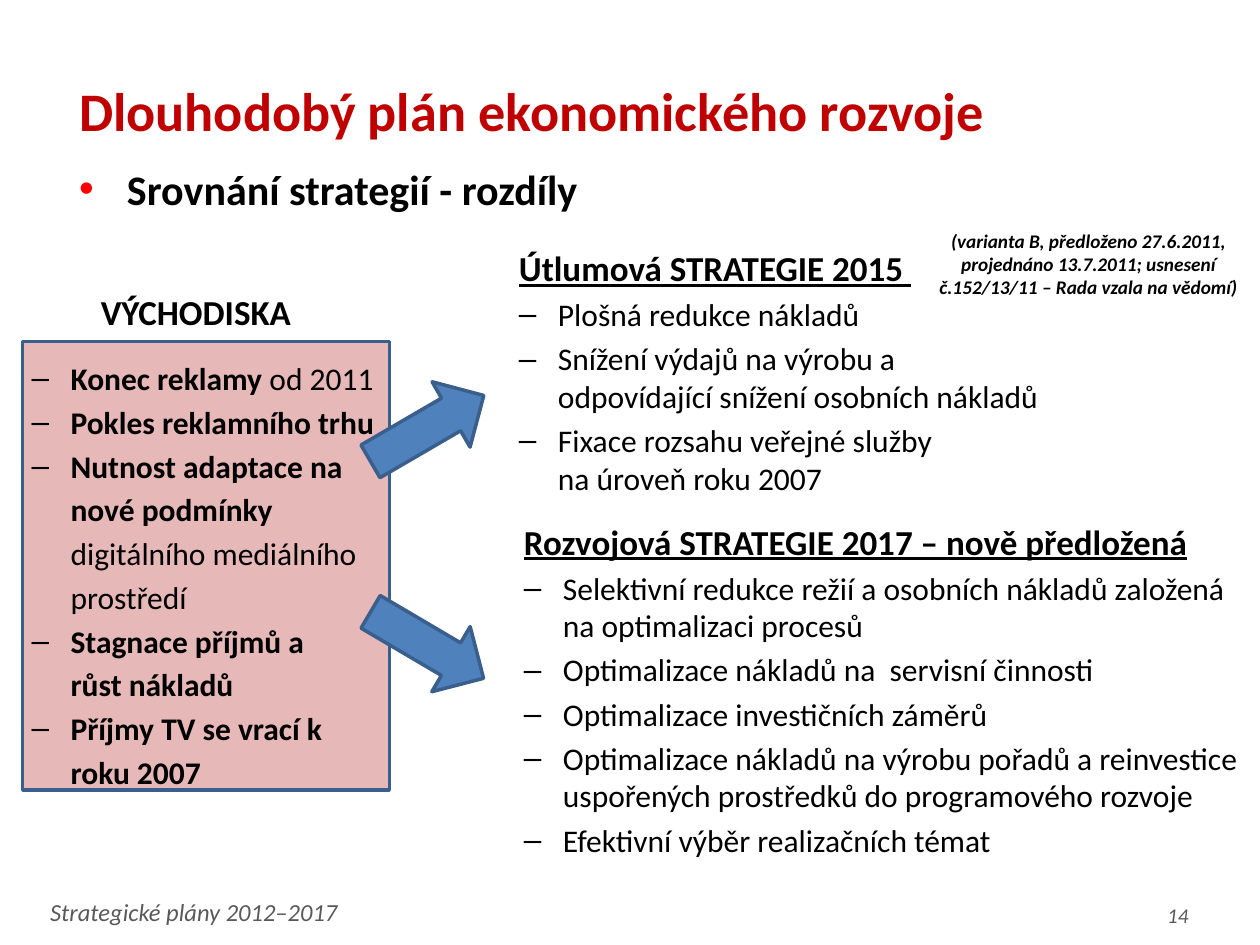
import dataclasses
import lxml.etree
import pptx
import pptx.dml.color
import pptx.enum.shapes
import pptx.enum.text
import pptx.oxml.ns
import pptx.util

SLIDE_W, SLIDE_H = 10, 7.5
COLUMNS, ROWS = 100, 75
ALIGN = pptx.enum.text.PP_ALIGN
ANCHOR = pptx.enum.text.MSO_ANCHOR
SHAPES = pptx.enum.shapes.MSO_SHAPE


@dataclasses.dataclass(frozen=True)
class Theme:
    font: str = "Calibri"
    ink: str = "000000"
    title: str = "C00000"
    bullet: str = "FF0000"
    muted: str = "595959"
    panel: str = "E6B9B8"
    arrow: str = "4F81BD"
    outline: str = "3A5F8C"
    title_size: float = 31
    subtitle_size: float = 24
    heading_size: float = 20
    body_size: float = 18
    footer_size: float = 14
    number_size: float = 12
    note_size: float = 11
    hang: float = 0.31
    gap: float = 3.6


THEME = Theme()


@dataclasses.dataclass(frozen=True)
class Box:
    column: float
    row: float
    columns: float
    rows: float

    def share(self, left, top, width, height):
        return Box(self.column + left * self.columns, self.row + top * self.rows,
                   width * self.columns, height * self.rows)

    def emu(self):
        across, down = SLIDE_W / COLUMNS, SLIDE_H / ROWS
        return [pptx.util.Inches(length) for length in (
            self.column * across, self.row * down, self.columns * across, self.rows * down)]


def rgb(value):
    return pptx.dml.color.RGBColor.from_string(value)


def style(runs, size, color=THEME.ink, bold=False, italic=False, underline=False):
    for run in runs:
        run.font.name = THEME.font
        run.font.size = pptx.util.Pt(size)
        run.font.color.rgb = rgb(color)
        run.font.bold, run.font.italic, run.font.underline = bold, italic, underline


def set_indent(paragraph, margin, first=0.0):
    properties = paragraph._p.get_or_add_pPr()
    properties.set("marL", str(pptx.util.Inches(margin)))
    properties.set("indent", str(pptx.util.Inches(first)))
    return properties


def set_bullet(paragraph, mark, hang, color=None):
    properties = set_indent(paragraph, hang, -hang)
    qn = pptx.oxml.ns.qn
    if color:
        bullet_color = lxml.etree.SubElement(properties, qn("a:buClr"))
        lxml.etree.SubElement(bullet_color, qn("a:srgbClr"), val=color)
    lxml.etree.SubElement(properties, qn("a:buFont"), typeface="Arial")
    lxml.etree.SubElement(properties, qn("a:buChar"), char=mark)


def add_text(slide, box, text, size, align=ALIGN.LEFT, anchor=ANCHOR.TOP, **look):
    frame = slide.shapes.add_textbox(*box.emu()).text_frame
    frame.word_wrap = True
    frame.vertical_anchor = anchor
    frame.text = text
    frame.paragraphs[0].alignment = align
    style(frame.paragraphs[0].runs, size, **look)
    return frame


def add_shape(slide, box, kind, fill):
    shape = slide.shapes.add_shape(kind, *box.emu())
    shape.shadow.inherit = False
    shape.fill.solid()
    shape.fill.fore_color.rgb = rgb(fill)
    shape.line.color.rgb = rgb(THEME.outline)
    shape.line.width = pptx.util.Pt(2)
    return shape


def add_header(slide, box, title, subtitle):
    add_text(slide, box.share(0, 0, 1, 0.71), title, THEME.title_size,
             anchor=ANCHOR.MIDDLE, color=THEME.title, bold=True)
    frame = add_text(slide, box.share(0, 0.62, 0.5, 0.38), subtitle,
                     THEME.subtitle_size, bold=True)
    set_bullet(frame.paragraphs[0], "•", 0.38, THEME.bullet)


def add_starting_points(slide, box, heading, points):
    add_shape(slide, box.share(0, 0.13, 1, 0.87), SHAPES.RECTANGLE, THEME.panel)
    frame = add_text(slide, box.share(0, 0, 1.01, 0.98), heading,
                     THEME.heading_size, bold=True)
    frame.margin_left = pptx.util.Inches(0.07)
    first = frame.paragraphs[0]
    set_indent(first, 0.55)
    first.line_spacing = pptx.util.Pt(29.3)
    first.space_after = pptx.util.Pt(12)
    for strong, plain in points:
        paragraph = frame.add_paragraph()
        paragraph.text = strong
        set_bullet(paragraph, "–", THEME.hang)
        paragraph.line_spacing = pptx.util.Pt(25)
        style(paragraph.runs, THEME.body_size, bold=True)
        if plain:
            tail = paragraph.add_run()
            tail.text = plain
            style([tail], THEME.body_size)


def add_strategy(slide, box, heading, points):
    frame = add_text(slide, box, heading, THEME.heading_size, bold=True, underline=True)
    for point in points:
        paragraph = frame.add_paragraph()
        paragraph.text = point
        set_bullet(paragraph, "–", THEME.hang)
        paragraph.space_before = pptx.util.Pt(THEME.gap)
        style(paragraph.runs, THEME.body_size)


def add_arrows(slide, box):
    height = 6 / box.rows
    for top, angle in ((0, -30.2), (1 - height, 30.5)):
        arrow = add_shape(slide, box.share(0, top, 1, height), SHAPES.RIGHT_ARROW, THEME.arrow)
        arrow.rotation = angle


def add_footer(slide, box, label, number):
    add_text(slide, box.share(0, 0, 0.5, 0.9), label, THEME.footer_size,
             color=THEME.muted, italic=True)
    add_text(slide, box.share(0.75, 0, 0.25, 1), number, THEME.number_size,
             ALIGN.RIGHT, ANCHOR.MIDDLE, color=THEME.muted, italic=True)


def main():
    deck = pptx.Presentation()
    deck.slide_width = pptx.util.Inches(SLIDE_W)
    deck.slide_height = pptx.util.Inches(SLIDE_H)
    slide = deck.slides.add_slide(deck.slide_layouts[6])

    add_footer(slide, Box(3, 70.7, 92.3, 3.8), "Strategické plány 2012–2017", "14")
    add_starting_points(slide, Box(1.8, 21.8, 29.1, 40.9), "VÝCHODISKA", [
        ("Konec reklamy ", "od 2011"),
        ("Pokles reklamního trhu", ""),
        ("Nutnost adaptace na nové podmínky ", "digitálního mediálního prostředí"),
        ("Stagnace příjmů a \vrůst nákladů", ""),
        ("Příjmy TV se vrací k roku 2007", ""),
    ])
    add_header(slide, Box(5.3, 3.6, 90, 14.3),
               "Dlouhodobý plán ekonomického rozvoje", "Srovnání strategií - rozdíly")
    add_strategy(slide, Box(40.2, 19.1, 53.9, 24.8), "Útlumová STRATEGIE 2015 ", [
        "Plošná redukce nákladů",
        "Snížení výdajů na výrobu a \vodpovídající snížení osobních nákladů",
        "Fixace rozsahu veřejné služby \vna úroveň roku 2007",
    ])
    add_strategy(slide, Box(40.6, 40.8, 59.4, 30), "Rozvojová STRATEGIE 2017 – nově předložená", [
        "Selektivní redukce režií a osobních nákladů založená na optimalizaci procesů",
        "Optimalizace nákladů na  servisní činnosti",
        "Optimalizace investičních záměrů",
        "Optimalizace nákladů na výrobu pořadů a reinvestice uspořených prostředků "
        "do programového rozvoje",
        "Efektivní výběr realizačních témat",
    ])
    add_arrows(slide, Box(28.7, 31, 10.4, 23.2))
    add_text(slide, Box(71.3, 17.7, 30.2, 6.6),
             "(varianta B, předloženo 27.6.2011, projednáno 13.7.2011; "
             "usnesení č.152/13/11 – Rada vzala na vědomí)",
             THEME.note_size, ALIGN.CENTER, bold=True, italic=True)
    deck.save("out.pptx")


if __name__ == "__main__":
    main()
